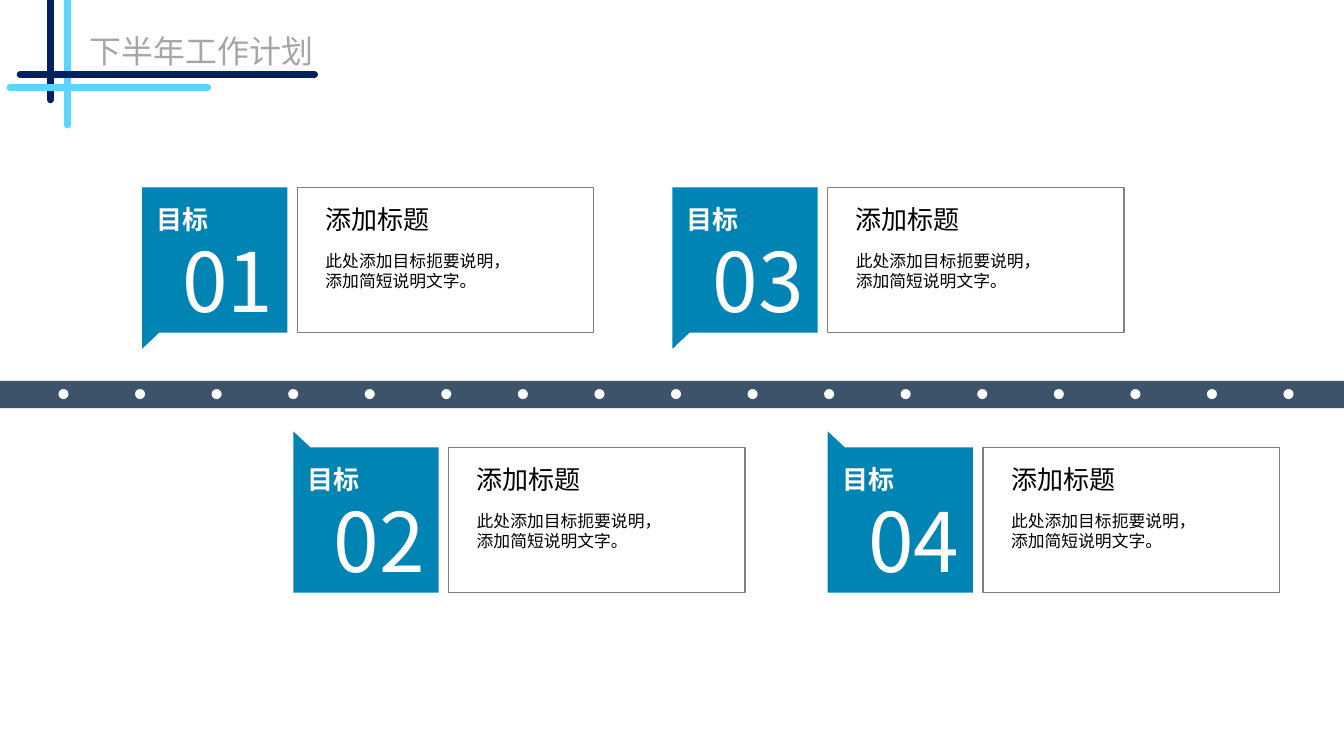
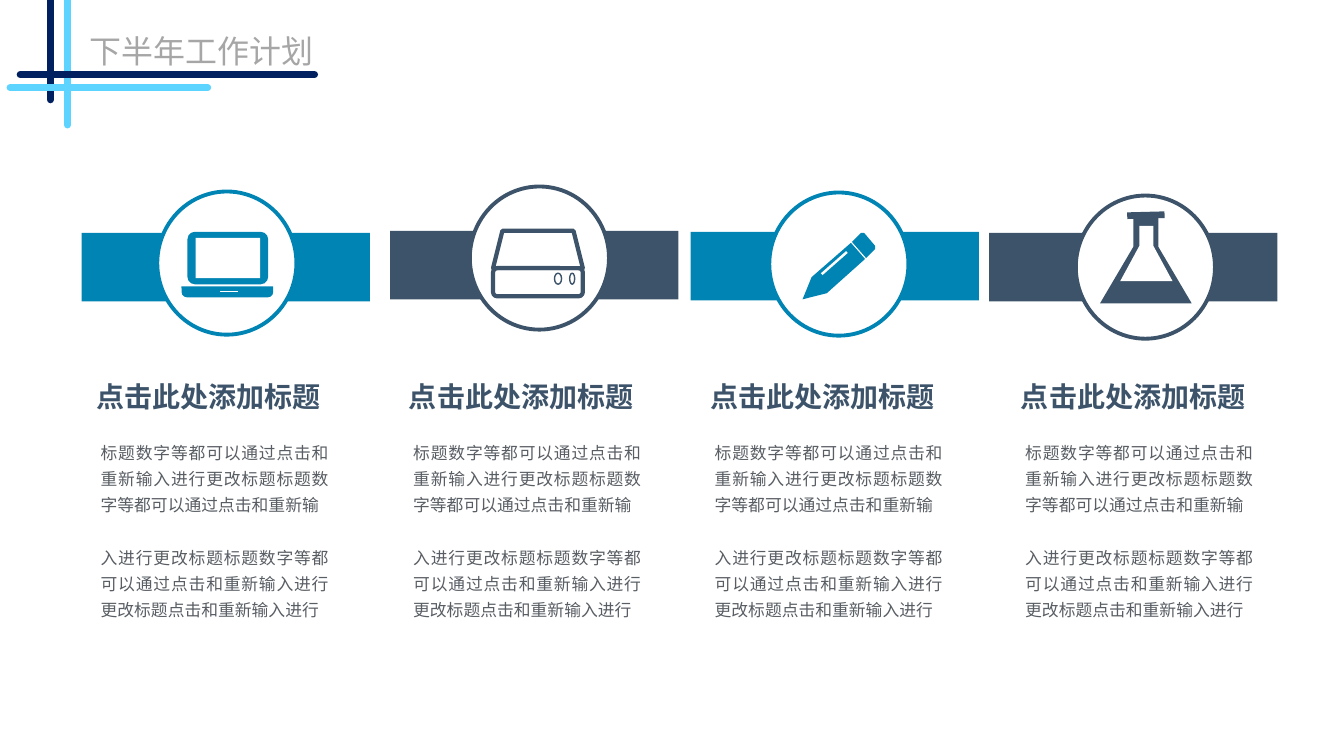
from dataclasses import dataclass
from typing import Callable

from lxml import etree
from pptx import Presentation
from pptx.dml.color import RGBColor
from pptx.enum.shapes import MSO_CONNECTOR, MSO_SHAPE
from pptx.enum.text import MSO_ANCHOR, MSO_AUTO_SIZE, PP_ALIGN
from pptx.oxml.ns import qn
from pptx.util import Inches, Pt

RECT = MSO_SHAPE.RECTANGLE
ROUND = MSO_SHAPE.ROUNDED_RECTANGLE
BASE = MSO_SHAPE.ROUND_2_SAME_RECTANGLE
TRAP = MSO_SHAPE.TRAPEZOID
OVAL = MSO_SHAPE.OVAL
STRAIGHT = MSO_CONNECTOR.STRAIGHT
LEFT, CENTER, FULL = PP_ALIGN.LEFT, PP_ALIGN.CENTER, PP_ALIGN.JUSTIFY
TOP, MIDDLE = MSO_ANCHOR.TOP, MSO_ANCHOR.MIDDLE
GROW = MSO_AUTO_SIZE.SHAPE_TO_FIT_TEXT

HUES = {
    "blue": "0084B4",
    "slate": "3C536A",
    "navy": "002060",
    "sky": "5DD4FF",
    "white": "FFFFFF",
    "black": "000000",
    "edge": "808080",
    "title": "A6A6A6",
    "body": "595E64",
}
SANS = "Noto Sans CJK SC"
WIDTH, HEIGHT = 13.33, 7.5

Point = tuple[float, float]


@dataclass
class Style:
    size: float
    hue: str
    font: str = SANS
    bold: bool = False
    align: PP_ALIGN = LEFT
    anchor: MSO_ANCHOR = TOP
    pad: bool = True
    wrap: bool = True
    lead: float | None = None
    gap: float = 0


@dataclass
class Card:
    num: str
    x: float
    y: float
    below: bool


@dataclass
class Column:
    hue: str
    band: Point
    ring: Point
    text: float
    icon: Callable


@dataclass
class Stroke:
    start: Point
    end: Point
    hue: str


TITLE = Style(22.8, "title", font="Arial", anchor=MIDDLE, pad=False)
NUM = Style(58.6, "white", pad=False)
LABEL = Style(18.6, "white", bold=True, align=CENTER, wrap=False)
HEAD = Style(18.6, "black")
NOTE = Style(12, "black", align=FULL)
TOPIC = Style(20, "slate", bold=True, align=CENTER)
BODY = Style(12, "body", align=FULL, lead=1.3, gap=18.8)

STROKES = [
    Stroke((0.5, 0), (0.5, 0.99), "navy"),
    Stroke((0.67, 0), (0.67, 1.24), "sky"),
    Stroke((3.12, 0.74), (0.2, 0.74), "navy"),
    Stroke((2.06, 0.87), (0.1, 0.87), "sky"),
]


def color(hue: str) -> RGBColor:
    return RGBColor.from_string(HUES[hue])


def paint(shape, fill: str | None, edge: str | None, weight: float) -> None:
    shape.shadow.inherit = False
    if fill:
        shape.fill.solid()
        shape.fill.fore_color.rgb = color(fill)
    else:
        shape.fill.background()
    if edge:
        shape.line.color.rgb = color(edge)
        shape.line.width = Pt(weight)
    else:
        shape.line.fill.background()


def add_form(slide, kind, x: float, y: float, w: float, h: float,
             fill: str | None = None, edge: str | None = None,
             weight: float = 1, bends: tuple = ()):
    shape = slide.shapes.add_shape(kind, Inches(x), Inches(y), Inches(w), Inches(h))
    for i, bend in enumerate(bends):
        shape.adjustments[i] = bend
    paint(shape, fill, edge, weight)
    return shape


def add_path(slide, x: float, y: float, loops: list[list[Point]], fill: str) -> None:
    maker = None
    for loop in loops:
        spots = [(Inches(x + a), Inches(y + b)) for a, b in loop]
        if maker is None:
            maker = slide.shapes.build_freeform(*spots[0])
        else:
            maker.move_to(*spots[0])
        maker.add_line_segments(spots[1:], close=True)
    paint(maker.convert_to_shape(), fill, None, 0)


def add_line(slide, start: Point, end: Point, hue: str, weight: float,
             cap: str = "flat") -> None:
    ends = [Inches(v) for v in (*start, *end)]
    line = slide.shapes.add_connector(STRAIGHT, *ends)
    line.line.color.rgb = color(hue)
    line.line.width = Pt(weight)
    line.line._get_or_add_ln().set("cap", cap)
    etree.SubElement(line._element.spPr, qn("a:effectLst"))


def add_text(slide, x: float, y: float, w: float, h: float,
             lines: list[str], style: Style) -> None:
    box = slide.shapes.add_textbox(Inches(x), Inches(y), Inches(w), Inches(h))
    frame = box.text_frame
    frame.word_wrap = style.wrap
    frame.auto_size = GROW
    frame.vertical_anchor = style.anchor
    if not style.pad:
        frame.margin_left = frame.margin_right = 0
        frame.margin_top = frame.margin_bottom = 0
    frame.text = "\n".join(lines)
    for i, para in enumerate(frame.paragraphs):
        para.alignment = style.align
        if style.lead:
            para.line_spacing = style.lead
        if i and style.gap:
            para.space_before = Pt(style.gap)
        font = para.font
        font.size = Pt(style.size)
        font.bold = style.bold
        font.color.rgb = color(style.hue)
        font.name = style.font
        east = etree.SubElement(font._element, qn("a:ea"))
        east.set("typeface", style.font)


def add_page(deck):
    slide = deck.slides.add_slide(deck.slide_layouts[6])
    add_text(slide, 0.89, 0.31, 4.09, 0.38, ["下半年工作计划"], TITLE)
    for item in STROKES:
        add_line(slide, item.start, item.end, item.hue, 5, "rnd")
    return slide


def draw_card(slide, card: Card) -> None:
    x, y, side = card.x, card.y, 1.44
    flag = [(0, 0), (side, 0), (side, side), (0.17, side), (0, 1.6)]
    if card.below:
        flag = [(a, side - b) for a, b in flag]
    add_path(slide, x, y, [flag], "blue")
    add_text(slide, x + 0.4, y + 0.43, 0.99, 0.99, [card.num], NUM)
    add_text(slide, x + 0.04, y + 0.11, 0.72, 0.42, ["目标"], LABEL)
    add_form(slide, RECT, x + 1.54, y, 2.94, side, edge="edge")
    add_text(slide, x + 1.72, y + 0.11, 2.13, 0.42, ["添加标题"], HEAD)
    add_text(slide, x + 1.72, y + 0.58, 2.53, 0.5,
             ["此处添加目标扼要说明，", "添加简短说明文字。"], NOTE)


def draw_laptop(slide, x: float, y: float, hue: str) -> None:
    add_form(slide, ROUND, x + 0.3, y + 0.4, 0.8, 0.52, hue, bends=(0.14,))
    add_form(slide, RECT, x + 0.38, y + 0.46, 0.64, 0.4, "white")
    base = add_form(slide, BASE, x + 0.24, y + 0.94, 0.91, 0.11, hue, bends=(0.5, 0))
    base.rotation = 180
    add_line(slide, (x + 0.62, y + 0.99), (x + 0.8, y + 0.99), "white", 1)


def draw_drive(slide, x: float, y: float, hue: str) -> None:
    add_form(slide, TRAP, x + 0.23, y + 0.44, 0.89, 0.37, None, hue, 3, (0.25,))
    add_form(slide, ROUND, x + 0.23, y + 0.81, 0.89, 0.28, None, hue, 3, (0.15,))
    for left, w in ((0.84, 0.07), (0.99, 0.05)):
        add_form(slide, OVAL, x + left, y + 0.86, w, 0.11, None, hue)


def draw_pencil(slide, x: float, y: float, hue: str) -> None:
    shaft = [(0.42, 0.84), (0.81, 0.5), (0.95, 0.66), (0.57, 1)]
    end = [(0.82, 0.49), (0.91, 0.4), (0.94, 0.4),
           (1.05, 0.53), (1.05, 0.56), (0.96, 0.65)]
    tip = [(0.42, 0.84), (0.57, 1), (0.33, 1.06)]
    add_path(slide, x, y, [shaft, end, tip], hue)
    add_line(slide, (x + 0.52, y + 0.81), (x + 0.77, y + 0.59), "white", 1.75)


def draw_flask(slide, x: float, y: float, hue: str) -> None:
    add_line(slide, (x + 0.51, y + 0.2), (x + 0.88, y + 0.19), hue, 4.75)
    outer = [(0.57, 0.19), (0.82, 0.19), (0.82, 0.51),
             (1.15, 1.07), (0.24, 1.07), (0.57, 0.51)]
    inner = [(0.63, 0.3), (0.77, 0.3), (0.77, 0.5),
             (0.96, 0.85), (0.44, 0.85), (0.63, 0.5)]
    add_path(slide, x, y, [outer], hue)
    add_path(slide, x, y, [inner], "white")


def draw_column(slide, col: Column) -> None:
    add_form(slide, RECT, *col.band, 2.86, 0.68, col.hue)
    add_form(slide, OVAL, *col.ring, 1.38, 1.42, "white", col.hue, 2.75)
    col.icon(slide, *col.ring, col.hue)
    add_text(slide, col.text, 3.72, 2.44, 0.44, ["点击此处添加标题"], TOPIC)
    add_text(slide, col.text + 0.05, 4.28, 2.46, 2.18, [
        "标题数字等都可以通过点击和重新输入进行更改标题标题数字等都可以通过点击和重新输",
        "入进行更改标题标题数字等都可以通过点击和重新输入进行更改标题点击和重新输入进行",
    ], BODY)


CARDS = [
    Card("01", 1.41, 1.86, False),
    Card("02", 2.91, 4.44, True),
    Card("03", 6.67, 1.86, False),
    Card("04", 8.21, 4.44, True),
]
COLUMNS = [
    Column("blue", (0.81, 2.31), (1.56, 1.9), 0.85, draw_laptop),
    Column("slate", (3.87, 2.29), (4.66, 1.85), 3.95, draw_drive),
    Column("blue", (6.85, 2.3), (7.63, 1.91), 6.94, draw_pencil),
    Column("slate", (9.81, 2.31), (10.67, 1.94), 10.02, draw_flask),
]


def build_goals(deck) -> None:
    slide = add_page(deck)
    add_form(slide, RECT, 0, 3.78, WIDTH, 0.27, "slate")
    first, last, count = 0.58, 12.73, 17
    for i in range(count):
        x = first + i * (last - first) / (count - 1)
        add_form(slide, OVAL, x, 3.86, 0.1, 0.1, "white")
    for card in CARDS:
        draw_card(slide, card)


def build_topics(deck) -> None:
    slide = add_page(deck)
    for col in COLUMNS:
        draw_column(slide, col)


def main() -> None:
    deck = Presentation()
    deck.slide_width = Inches(WIDTH)
    deck.slide_height = Inches(HEIGHT)
    build_goals(deck)
    build_topics(deck)
    deck.save("out.pptx")


if __name__ == "__main__":
    main()
